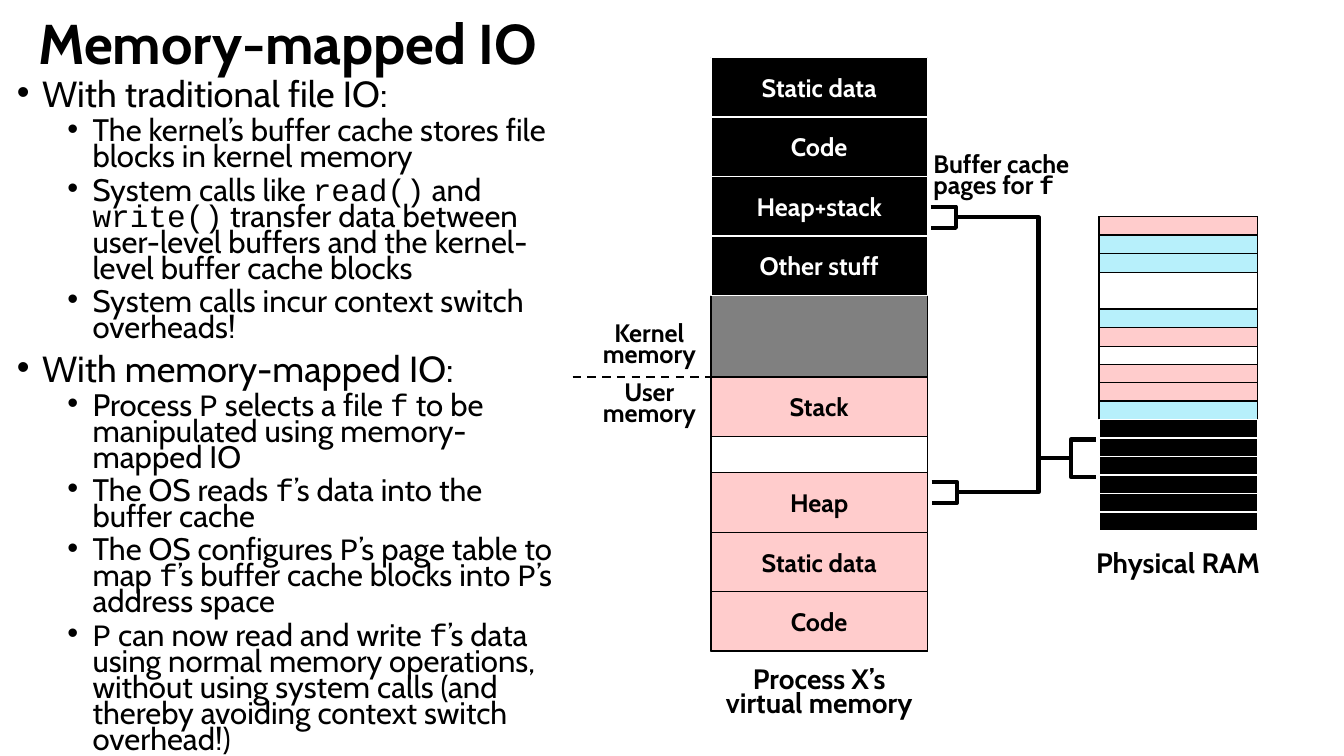
from lxml import etree
from pptx import Presentation
from pptx.dml.color import RGBColor
from pptx.enum.dml import MSO_LINE
from pptx.enum.shapes import MSO_CONNECTOR, MSO_SHAPE
from pptx.enum.text import MSO_ANCHOR, PP_ALIGN
from pptx.oxml.ns import qn
from pptx.util import Pt

RECT = MSO_SHAPE.RECTANGLE
LEFT_BRACKET, RIGHT_BRACKET = MSO_SHAPE.LEFT_BRACKET, MSO_SHAPE.RIGHT_BRACKET
STRAIGHT, ELBOW = MSO_CONNECTOR.STRAIGHT, MSO_CONNECTOR.ELBOW
LEFT, CENTER = PP_ALIGN.LEFT, PP_ALIGN.CENTER
TOP, MIDDLE = MSO_ANCHOR.TOP, MSO_ANCHOR.MIDDLE
DASH = MSO_LINE.DASH

PX = 9144  # 100 px to the inch
FONT, CODE_FONT = "Cabin", "Courier New"
BLACK, WHITE, GREY, PINK, BLUE = "000000", "FFFFFF", "808080", "FFCCCC", "B7F0FB"

TITLE = "Memory-mapped IO"
# Backticks enclose code.
BULLETS = [
    ("With traditional file IO:", [
        "The kernel’s buffer cache stores file blocks in kernel memory",
        "System calls like `read()` and `write()` transfer data between "
        "user-level buffers and the kernel-level buffer cache blocks",
        "System calls incur context switch overheads!",
    ]),
    ("With memory-mapped IO:", [
        "Process `P` selects a file `f` to be manipulated using memory-mapped IO",
        "The OS reads `f`’s data into the buffer cache",
        "The OS configures `P`’s page table to map `f`’s buffer cache blocks "
        "into `P`’s address space",
        "`P` can now read and write `f`’s data using normal memory operations, "
        "without using system calls (and thereby avoiding context switch overhead!)",
    ]),
]
KERNEL_REGIONS = ["Static data", "Code", "Heap+stack", "Other stuff"]
USER_REGIONS = ["Heap", "Static data", "Code"]
RAM_PAGES = [PINK, BLUE, BLUE, None, None, BLUE, PINK, None, PINK, PINK, BLUE] + [BLACK] * 6
# box, paragraphs, size, line spacing in points, alignment
LABELS = [
    ((568, 319, 152, 53), ["Kernel memory"], 18, 15, CENTER),
    ((568, 378, 152, 53), ["User memory"], 18, 15, CENTER),
    ((650, 661, 325, 89), ["Process X’s", "virtual memory"], 20, 17, CENTER),
    ((1050, 546, 237, 49), ["Physical RAM"], 20, 17, CENTER),
    ((916, 151, 171, 53), ["Buffer cache pages for `f`"], 18, 15, LEFT),
]

MEMORY_LEFT, MEMORY_WIDTH, REGION_HEIGHT = 705, 215, 59
MEMORY_TOP, BOUNDARY, MEMORY_BOTTOM = 57, 374, 646
RAM_LEFT, RAM_TOP, RAM_WIDTH, RAM_HEIGHT = 1090, 215, 157, 310
PAGE_PITCH, PAGE_HEIGHT = 18.3, 19
CACHE_BRACKET = (923, 205, 25, 21)
HEAP_BRACKET = (924, 478, 25, 21)
RAM_BRACKET = (1062, 436, 25, 37)
WIRE_BEND = 1030

prs = Presentation()
prs.slide_width, prs.slide_height = 1333 * PX, 750 * PX
slide = prs.slides.add_slide(prs.slide_layouts[6])


def rgb(color):
    return RGBColor.from_string(color)


def emu(lengths):
    return [round(length * PX) for length in lengths]


def add_runs(paragraph, text, size, color=BLACK, bold=False):
    """Add the text, setting the parts between backticks in the code font."""
    for i, part in enumerate(text.split("`")):
        if part:
            run = paragraph.add_run()
            run.text = part
            run.font.name = CODE_FONT if i % 2 else FONT
            run.font.size = Pt(size)
            run.font.bold = bold
            run.font.color.rgb = rgb(color)


def add_text(box, anchor=TOP):
    frame = slide.shapes.add_textbox(*emu(box)).text_frame
    frame.word_wrap = True
    frame.vertical_anchor = anchor
    return frame


def next_paragraph(frame):
    first = frame.paragraphs[0]
    return frame.add_paragraph() if first.runs else first


def add_bullet(frame, text, level):
    paragraph = next_paragraph(frame)
    paragraph.level = level
    paragraph.alignment = LEFT
    paragraph.line_spacing = 0.7
    paragraph.space_before = Pt(5 if level else 10)
    props = paragraph._p.get_or_add_pPr()
    props.set("marL", str((75 if level else 25) * PX))
    props.set("indent", str(-25 * PX))
    etree.SubElement(props, qn("a:buFont")).set("typeface", "Arial")
    etree.SubElement(props, qn("a:buChar")).set("char", "•")
    add_runs(paragraph, text, 22.2 if level else 25.9)


def add_box(box, fill, text=""):
    shape = slide.shapes.add_shape(RECT, *emu(box))
    shape.shadow.inherit = False
    shape.fill.solid()
    shape.fill.fore_color.rgb = rgb(fill)
    shape.line.color.rgb = rgb(WHITE if fill == BLACK else BLACK)
    shape.line.width = Pt(1)
    if text:
        shape.text_frame.vertical_anchor = MIDDLE
        paragraph = shape.text_frame.paragraphs[0]
        paragraph.alignment = CENTER
        add_runs(paragraph, text, 18, WHITE if fill == BLACK else BLACK, True)


def add_region(top, fill, text="", height=REGION_HEIGHT):
    add_box((MEMORY_LEFT, top, MEMORY_WIDTH, height), fill, text)


def add_bracket(kind, box):
    bracket = slide.shapes.add_shape(kind, *emu(box))
    bracket.shadow.inherit = False
    bracket.adjustments[0] = 0
    bracket.fill.background()
    bracket.line.color.rgb = rgb(BLACK)
    bracket.line.width = Pt(3)


def add_line(kind, start, end, width):
    line = slide.shapes.add_connector(kind, *emu(start + end))
    line.line.color.rgb = rgb(BLACK)
    line.line.width = Pt(width)
    etree.SubElement(line._element.spPr, qn("a:effectLst"))
    return line


def add_wire(bracket):
    """Join a bracket beside the virtual memory to the RAM bracket."""
    left, top, width, height = bracket
    start = (left + width, top + height / 2)
    end = (RAM_BRACKET[0], RAM_BRACKET[1] + RAM_BRACKET[3] / 2)
    wire = add_line(ELBOW, start, end, 3)
    bend = round(100000 * (WIRE_BEND - start[0]) / (end[0] - start[0]))
    guides = wire._element.spPr.find(qn("a:prstGeom")).get_or_add_avLst()
    guide = etree.SubElement(guides, qn("a:gd"))
    guide.set("name", "adj1")
    guide.set("fmla", f"val {bend}")


# Title and bullets
title = add_text((0, 0, 571, 91), MIDDLE).paragraphs[0]
title.alignment = CENTER
title.line_spacing = 0.9
add_runs(title, TITLE, 40, bold=True)

body = add_text((7, 78, 556, 693))
for heading, points in BULLETS:
    add_bullet(body, heading, 0)
    for point in points:
        add_bullet(body, point, 1)

# Virtual memory
add_region(MEMORY_TOP, GREY, height=BOUNDARY - MEMORY_TOP)
add_region(BOUNDARY, WHITE, height=MEMORY_BOTTOM - BOUNDARY)
for i, name in enumerate(KERNEL_REGIONS):
    add_region(MEMORY_TOP + i * REGION_HEIGHT, BLACK, name)
add_region(BOUNDARY, PINK, "Stack")
user_top = MEMORY_BOTTOM - len(USER_REGIONS) * REGION_HEIGHT
for i, name in enumerate(USER_REGIONS):
    add_region(user_top + i * REGION_HEIGHT, PINK, name)
add_line(STRAIGHT, (568, BOUNDARY), (MEMORY_LEFT, BOUNDARY), 1.5).line.dash_style = DASH

# Physical RAM
add_box((RAM_LEFT, RAM_TOP, RAM_WIDTH, RAM_HEIGHT), WHITE)
for i, fill in enumerate(RAM_PAGES):
    if fill:
        add_box((RAM_LEFT, RAM_TOP + i * PAGE_PITCH, RAM_WIDTH, PAGE_HEIGHT), fill)

# Mapping of the buffer cache
add_bracket(LEFT_BRACKET, RAM_BRACKET)
for bracket_box in (CACHE_BRACKET, HEAP_BRACKET):
    add_bracket(RIGHT_BRACKET, bracket_box)
    add_wire(bracket_box)

for box, lines, size, spacing, alignment in LABELS:
    label = add_text(box)
    for text in lines:
        paragraph = next_paragraph(label)
        paragraph.alignment = alignment
        paragraph.line_spacing = Pt(spacing)
        add_runs(paragraph, text, size, bold=True)

prs.save("out.pptx")
